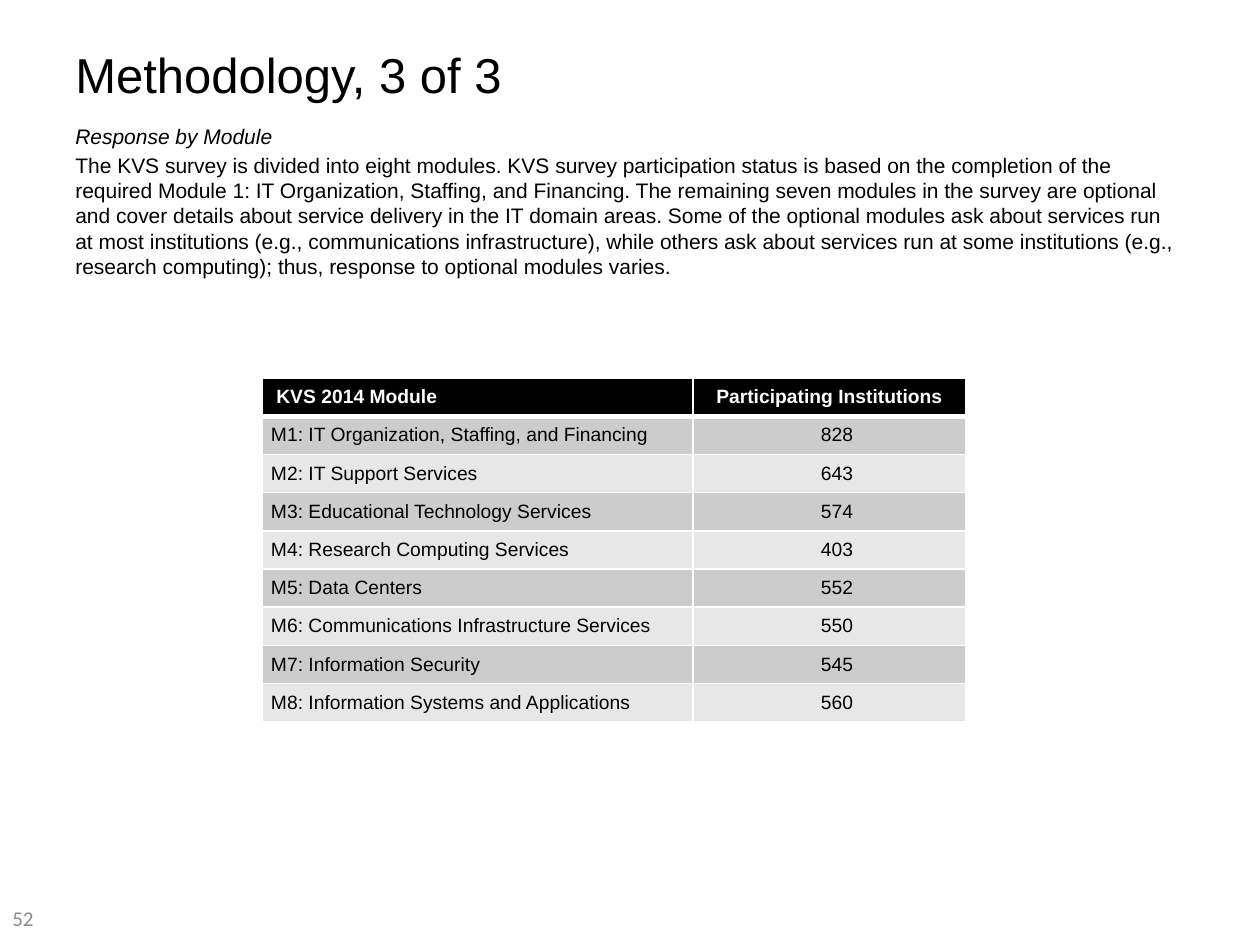
from lxml import etree
from pptx import Presentation
from pptx.dml.color import RGBColor
from pptx.enum.text import MSO_ANCHOR, PP_ALIGN
from pptx.oxml.ns import qn
from pptx.util import Pt

LEFT, CENTER, RIGHT = PP_ALIGN.LEFT, PP_ALIGN.CENTER, PP_ALIGN.RIGHT
TOP, MIDDLE = MSO_ANCHOR.TOP, MSO_ANCHOR.MIDDLE
SCALE = 914400 / 126

INTRO = (
    "The KVS survey is divided into eight modules. KVS survey participation status "
    "is based on the completion of the required Module 1: IT Organization, Staffing, "
    "and Financing. The remaining seven modules in the survey are optional and cover "
    "details about service delivery in the IT domain areas. Some of the optional "
    "modules ask about services run at most institutions (e.g., communications "
    "infrastructure), while others ask about services run at some institutions "
    "(e.g., research computing); thus, response to optional modules varies."
)
HEADS = [" KVS 2014 Module", "Participating Institutions"]
MODULES = [
    ("M1: IT Organization, Staffing, and Financing", 828),
    ("M2: IT Support Services", 643),
    ("M3: Educational Technology Services", 574),
    ("M4: Research Computing Services", 403),
    ("M5: Data Centers", 552),
    ("M6: Communications Infrastructure Services", 550),
    ("M7: Information Security", 545),
    ("M8: Information Systems and Applications", 560),
]


def px(length):
    """Turn pixels into EMU."""
    return round(length * SCALE)


def color(value):
    """Turn a hex string into a colour."""
    return RGBColor.from_string(value)


def write(para, text, size=12, face="Arial", ink="000000", bold=False,
          italic=False, align=LEFT, before=0):
    """Write one formatted run into a paragraph."""
    para.alignment = align
    para.space_before = Pt(before)
    run = para.add_run()
    run.text = text
    font = run.font
    font.size, font.name = Pt(size), face
    font.bold, font.italic = bold, italic
    font.color.rgb = color(ink)


def add_box(slide, left, top, width, height, anchor=TOP):
    """Add a wrapping text box and return its frame."""
    box = slide.shapes.add_textbox(px(left), px(top), px(width), px(height))
    frame = box.text_frame
    frame.word_wrap = True
    frame.vertical_anchor = anchor
    return frame


def add_lines(cell, base):
    """Draw white borders round a cell, with its own base width in points."""
    props = cell._tc.get_or_add_tcPr()
    widths = {"a:lnL": 1, "a:lnR": 1, "a:lnT": 1, "a:lnB": base}
    for place, (tag, width) in enumerate(widths.items()):
        line = etree.Element(qn(tag), w=str(Pt(width)))
        fill = etree.SubElement(line, qn("a:solidFill"))
        etree.SubElement(fill, qn("a:srgbClr"), val="FFFFFF")
        props.insert(place, line)


def fill_cell(cell, text, fill, inset=9, base=1, **style):
    """Set the text, fill, margins and borders of a cell."""
    cell.margin_left, cell.margin_right = px(9), px(inset)
    cell.margin_top = cell.margin_bottom = 0
    cell.vertical_anchor = MIDDLE
    cell.fill.solid()
    cell.fill.fore_color.rgb = color(fill)
    write(cell.text_frame.paragraphs[0], text, size=11, **style)
    add_lines(cell, base)


def add_grid(slide):
    """Add the table of modules and participating institutions."""
    count = len(MODULES) + 1
    frame = slide.shapes.add_table(count, 2, px(262), px(378), px(704), px(344))
    table = frame.table
    for column, width in zip(table.columns, (431, 273)):
        column.width = px(width)
    for col, (head, align) in enumerate(zip(HEADS, (LEFT, CENTER))):
        fill_cell(table.cell(0, col), head, "000000", base=3,
                  ink="FFFFFF", bold=True, align=align)
    for row, (name, total) in enumerate(MODULES, 1):
        band = "CCCCCC" if row % 2 else "E7E7E7"
        fill_cell(table.cell(row, 0), name, band)
        fill_cell(table.cell(row, 1), str(total), band, inset=113, align=RIGHT)


def main():
    """Build and save the slide."""
    deck = Presentation()
    deck.slide_width, deck.slide_height = px(1260), px(945)
    slide = deck.slides.add_slide(deck.slide_layouts[6])
    number = add_box(slide, 0, 892, 136, 53, MIDDLE)
    write(number.paragraphs[0], "52", face="Calibri", ink="8C8C8C")
    title = add_box(slide, 63, 38, 1134, 64)
    write(title.paragraphs[0], "Methodology, 3 of 3", size=28)
    body = add_box(slide, 63, 117, 1134, 241)
    write(body.paragraphs[0], "Response by Module", italic=True)
    write(body.add_paragraph(), INTRO, before=2.4)
    add_grid(slide)
    deck.save("out.pptx")


if __name__ == "__main__":
    main()
